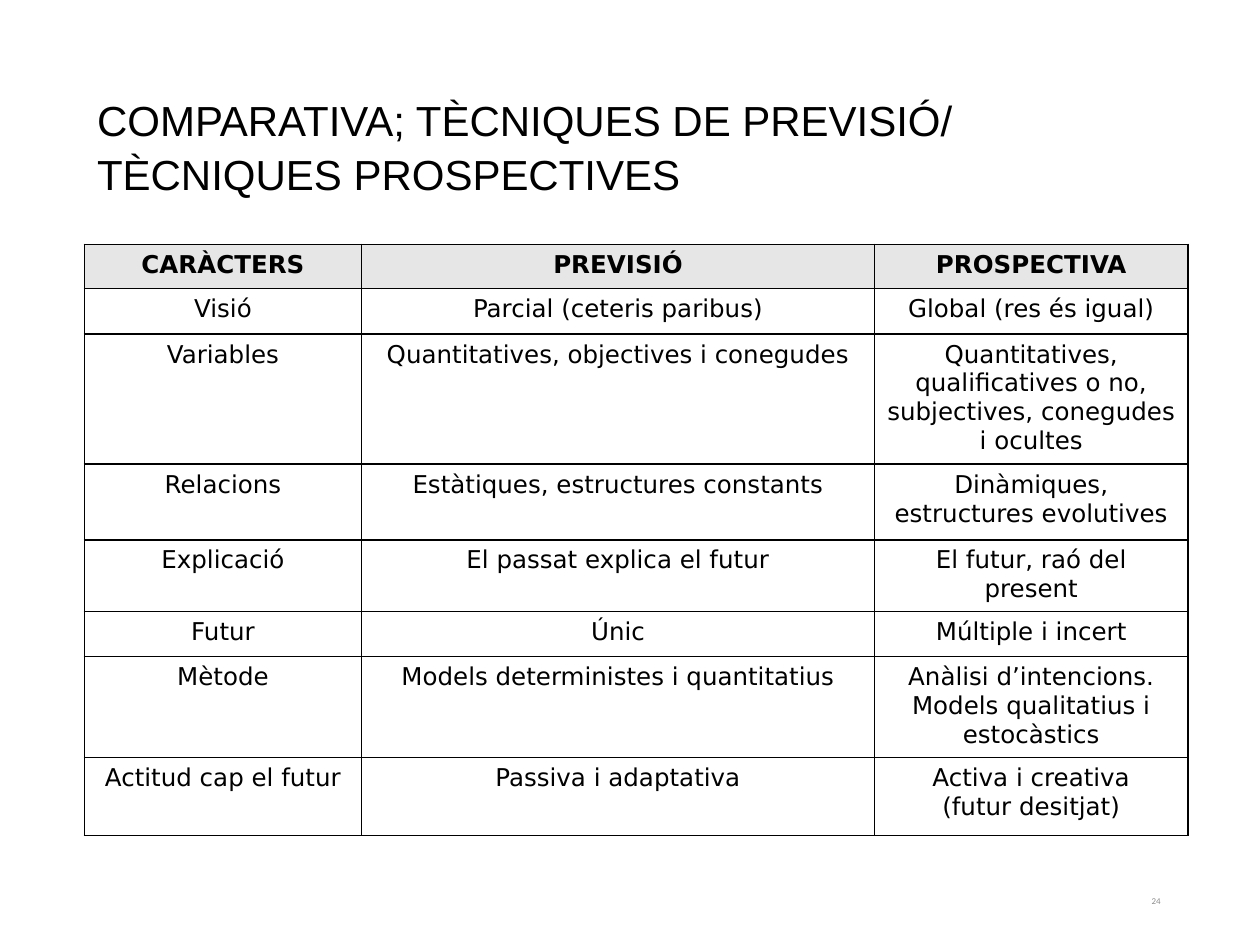
from lxml.etree import SubElement
from pptx import Presentation
from pptx.dml.color import RGBColor
from pptx.enum.text import MSO_ANCHOR, MSO_AUTO_SIZE, PP_ALIGN
from pptx.oxml.ns import qn
from pptx.util import Inches, Pt

BLACK, WHITE, HEADER_GREY, NUMBER_GREY = "000000", "FFFFFF", "E7E6E6", "8C8C8C"
SLIDE_SIZE = (10, 7.5)
COLUMN_WIDTHS = (2.2, 4.07, 2.49)
ROW_HEIGHTS = (0.35, 0.36, 1.01, 0.6, 0.56, 0.36, 0.79, 0.62)
COMPARISON = (
    ("CARÀCTERS", "PREVISIÓ", "PROSPECTIVA"),
    ("Visió", "Parcial (ceteris paribus)", "Global (res és igual)"),
    ("Variables", "Quantitatives, objectives i conegudes",
     "Quantitatives, qualificatives o no, subjectives, conegudes i ocultes"),
    ("Relacions", "Estàtiques, estructures constants",
     "Dinàmiques, estructures evolutives"),
    ("Explicació", "El passat explica el futur", "El futur, raó del present"),
    ("Futur", "Únic", "Múltiple i incert"),
    ("Mètode", "Models deterministes i quantitatius",
     "Anàlisi d’intencions. Models qualitatius i estocàstics"),
    ("Actitud cap el futur", "Passiva i adaptativa",
     "Activa i creativa\n(futur desitjat)"),
)


def colour(hex_string):
    return RGBColor.from_string(hex_string)


def write_text(frame, text, font="DejaVu Sans", size=14, hue=BLACK, bold=False,
               align=PP_ALIGN.CENTER, spacing=None):
    """Fill a text frame, one paragraph for each line of text."""
    frame.word_wrap = True
    for index, line in enumerate(text.split("\n")):
        para = frame.add_paragraph() if index else frame.paragraphs[0]
        para.alignment = align
        para.line_spacing = spacing
        span = para.add_run()
        span.text = line
        span.font.name, span.font.size, span.font.bold = font, Pt(size), bold
        span.font.color.rgb = colour(hue)


def style_cell(cell, fill, alpha=None):
    """Give a cell black borders and a fill, see-through if alpha is given."""
    properties = cell._tc.get_or_add_tcPr()
    for side in ("lnL", "lnR", "lnT", "lnB"):
        border = SubElement(properties, qn(f"a:{side}"), w=str(Pt(1)))
        paint = SubElement(border, qn("a:solidFill"))
        SubElement(paint, qn("a:srgbClr"), val=BLACK)
    cell.fill.solid()
    cell.fill.fore_color.rgb = colour(fill)
    if alpha is not None:
        shade = properties.find(qn("a:solidFill")).find(qn("a:srgbClr"))
        SubElement(shade, qn("a:alpha"), val=str(alpha * 1000))


def place_title(page, box, text):
    title = page.shapes.title
    title.left, title.top, title.width, title.height = map(Inches, box)
    write_text(title.text_frame, text, font="Arial", size=24,
               align=PP_ALIGN.LEFT, spacing=1.06)
    title.text_frame.vertical_anchor = MSO_ANCHOR.TOP
    title.text_frame.auto_size = MSO_AUTO_SIZE.SHAPE_TO_FIT_TEXT


def place_table(page, left, top, rows):
    size = (sum(COLUMN_WIDTHS), sum(ROW_HEIGHTS))
    table = page.shapes.add_table(len(rows), len(COLUMN_WIDTHS),
                                  *map(Inches, (left, top, *size))).table
    for column, width in zip(table.columns, COLUMN_WIDTHS):
        column.width = Inches(width)
    for row, height, texts in zip(table.rows, ROW_HEIGHTS, rows):
        row.height = Inches(height)
        header = texts is rows[0]
        for cell, text in zip(row.cells, texts):
            write_text(cell.text_frame, text, bold=header)
            if header:
                style_cell(cell, HEADER_GREY)
            else:
                style_cell(cell, WHITE, alpha=50)


def place_number(page, box, text):
    frame = page.shapes.add_textbox(*map(Inches, box)).text_frame
    frame.vertical_anchor = MSO_ANCHOR.MIDDLE
    write_text(frame, text, font="Calibri", size=5.1, hue=NUMBER_GREY,
               align=PP_ALIGN.RIGHT)


def main():
    deck = Presentation()
    deck.slide_width, deck.slide_height = map(Inches, SLIDE_SIZE)
    page = deck.slides.add_slide(deck.slide_layouts.get_by_name("Title Only"))
    margin = 0.67

    # Comparison table, page number, title
    place_table(page, margin, 1.94, COMPARISON)
    place_number(page, (7.06, 6.95, 2.25, 0.4), "24")
    place_title(page, (margin, 0.68, 8.35, 0.91),
                "COMPARATIVA; TÈCNIQUES DE PREVISIÓ/ TÈCNIQUES PROSPECTIVES")
    deck.save("out.pptx")


if __name__ == "__main__":
    main()
